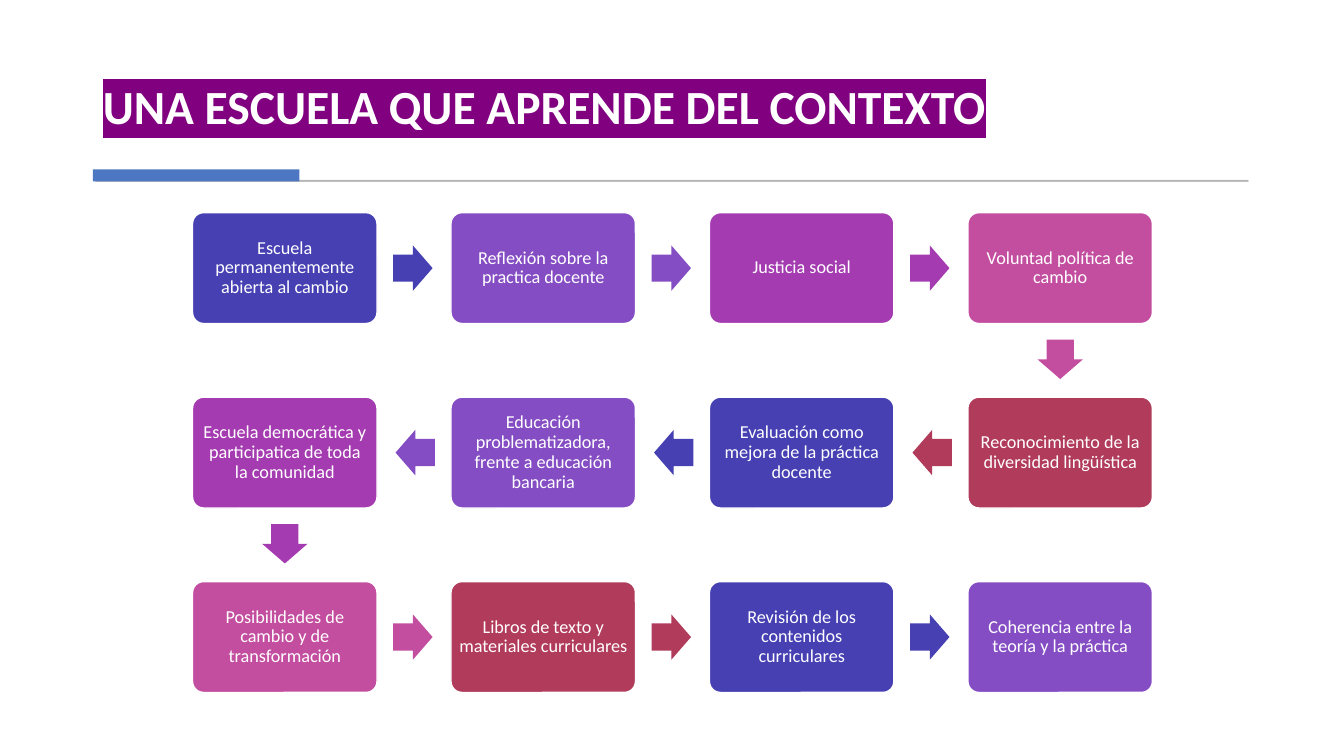
from lxml.etree import SubElement
from pptx import Presentation
from pptx.dml.color import RGBColor
from pptx.enum.shapes import MSO_SHAPE as Shape
from pptx.enum.text import MSO_ANCHOR as Anchor, MSO_AUTO_SIZE as AutoSize, PP_ALIGN as Align
from pptx.oxml import parse_xml
from pptx.oxml.ns import nsdecls, qn
from pptx.util import Inches, Pt

HEADING = "UNA ESCUELA QUE APRENDE DEL CONTEXTO"
STEPS = [
    "Escuela permanentemente abierta al cambio",
    "Reflexión sobre la practica docente",
    "Justicia social",
    "Voluntad política de cambio",
    "Reconocimiento de la diversidad lingüística",
    "Evaluación como mejora de la práctica docente",
    "Educación problematizadora, frente a educación bancaria",
    "Escuela democrática y participatica de toda la comunidad",
    "Posibilidades de cambio y de transformación",
    "Libros de texto y materiales curriculares",
    "Revisión de los contenidos curriculares",
    "Coherencia entre la teoría y la práctica",
]
COLORS = {
    "white": "FFFFFF", "highlight": "800080", "rule": "595959", "accent": "4D77C3",
    "indigo": "4640B3", "violet": "854DC3", "purple": "A53BB1",
    "pink": "C34D9F", "crimson": "B13B5B",
}
CYCLE = ["indigo", "violet", "purple", "pink", "crimson"]
FONT = "Calibri"

COLUMNS = 4
GRID_LEFT, GRID_TOP = 1.91, 2.11
COLUMN_PITCH, ROW_PITCH = 7.69 / (COLUMNS - 1), 1.83
BOX_W, BOX_H = 1.83, 1.1
ARROW_W, ARROW_H, ARROW_GAP = 0.39, 0.45, 0.16


def color(name):
    return RGBColor.from_string(COLORS[name])


def add_filled(slide, kind, left, top, width, height, fill):
    shape = slide.shapes.add_shape(kind, *map(Inches, (left, top, width, height)))
    shape.shadow.inherit = False
    shape.fill.solid()
    shape.fill.fore_color.rgb = color(fill)
    shape.line.fill.background()
    return shape


def add_words(paragraph, words, size, bold=False):
    paragraph.line_spacing = 0.9
    run = paragraph.add_run()
    run.text = words
    run.font.size = Pt(size)
    run.font.bold = bold
    run.font.color.rgb = color("white")
    run.font.name = FONT
    return run


def add_heading(slide):
    heading = slide.shapes.title
    heading.left, heading.top, heading.width, heading.height = map(
        Inches, (0.92, 0.28, 11.49, 1.11))
    frame = heading.text_frame
    frame.word_wrap = True
    frame.auto_size = AutoSize.NONE
    frame.vertical_anchor = Anchor.BOTTOM
    paragraph = frame.paragraphs[0]
    paragraph.alignment = Align.LEFT
    paragraph.space_after = Pt(6)
    run = add_words(paragraph, HEADING, 34, bold=True)
    run.font.fill._xPr.find(qn("a:solidFill")).addnext(parse_xml(
        f'<a:highlight {nsdecls("a")}><a:srgbClr val="{COLORS["highlight"]}"/></a:highlight>'))


def add_rule(slide):
    rule = add_filled(slide, Shape.RECTANGLE, 0.95, 1.79, 11.43, 0.01, "rule")
    rule.line.color.rgb = color("rule")
    rule.line.width = Pt(0.75)
    for tint in rule._element.spPr.iter(qn("a:srgbClr")):
        SubElement(tint, qn("a:alpha")).set("val", "30000")
    add_filled(slide, Shape.RECTANGLE, 0.92, 1.68, 2.05, 0.12, "accent")


def cell(index):
    row, position = divmod(index, COLUMNS)
    column = position if row % 2 == 0 else COLUMNS - 1 - position
    return column, row


def add_step(slide, index, words):
    column, row = cell(index)
    left, top = GRID_LEFT + column * COLUMN_PITCH, GRID_TOP + row * ROW_PITCH
    fill = CYCLE[index % len(CYCLE)]
    box = add_filled(slide, Shape.ROUNDED_RECTANGLE, left, top, BOX_W, BOX_H, fill)
    box.adjustments[0] = 0.1
    box.line.color.rgb = color("white")
    box.line.width = Pt(1)
    frame = box.text_frame
    frame.word_wrap = True
    frame.vertical_anchor = Anchor.MIDDLE
    frame.margin_left = frame.margin_right = Inches(0.05)
    frame.margin_top = frame.margin_bottom = Inches(0.05)
    frame.paragraphs[0].alignment = Align.CENTER
    add_words(frame.paragraphs[0], words, 13)

    if index == len(STEPS) - 1:
        return
    next_column, next_row = cell(index + 1)
    across, down = next_column - column, next_row - row
    reach = ARROW_GAP + ARROW_W / 2
    center_x = left + BOX_W / 2 + across * (BOX_W / 2 + reach)
    center_y = top + BOX_H / 2 + down * (BOX_H / 2 + reach)
    arrow = add_filled(slide, Shape.RIGHT_ARROW, center_x - ARROW_W / 2,
                       center_y - ARROW_H / 2, ARROW_W, ARROW_H, fill)
    arrow.adjustments[0], arrow.adjustments[1] = 0.6, 0.5
    arrow.rotation = 90 if down else 90 * (1 - across)


def main():
    deck = Presentation()
    deck.slide_width, deck.slide_height = Inches(13.33), Inches(7.5)
    slide = deck.slides.add_slide(deck.slide_layouts[5])
    add_heading(slide)
    add_rule(slide)
    for index, words in enumerate(STEPS):
        add_step(slide, index, words)
    deck.save("out.pptx")


if __name__ == "__main__":
    main()
